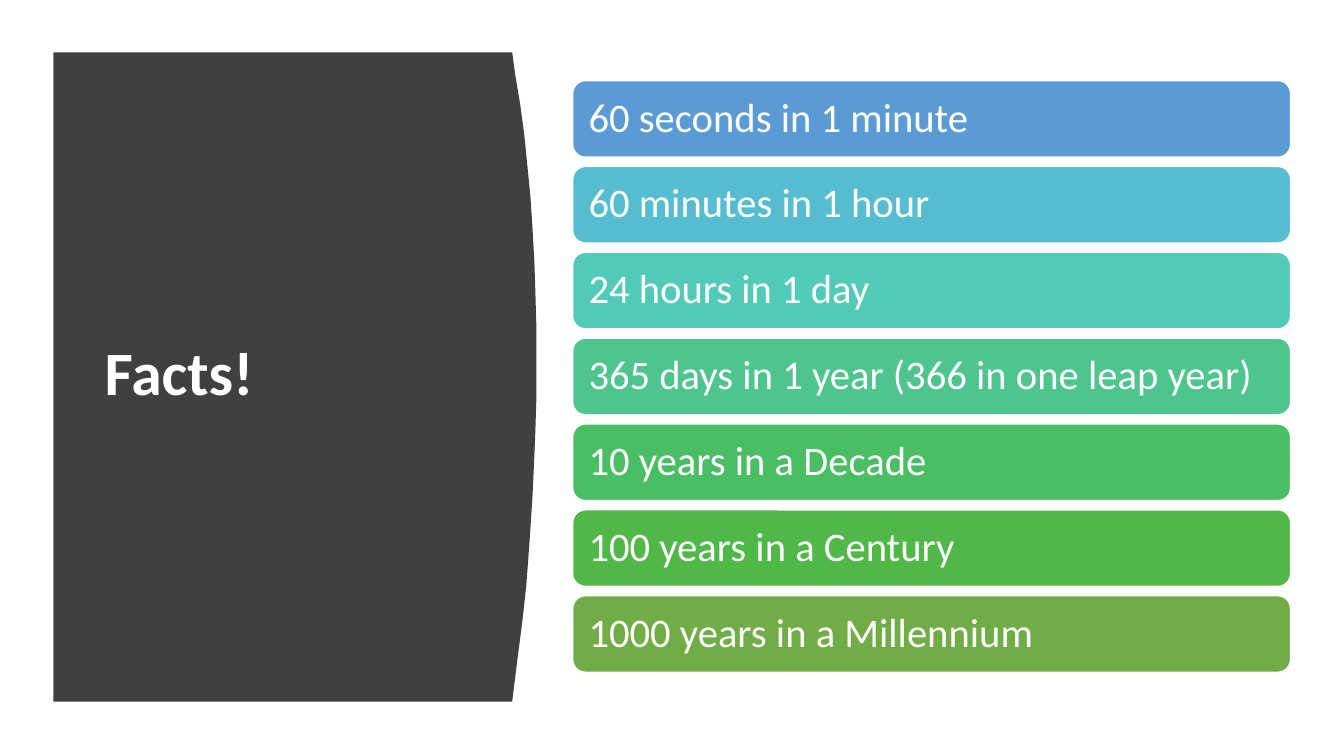
from pptx import Presentation
from pptx.dml.color import RGBColor
from pptx.enum.shapes import MSO_SHAPE
from pptx.enum.text import MSO_ANCHOR, PP_ALIGN
from pptx.util import Inches, Pt

ROUNDED = MSO_SHAPE.ROUNDED_RECTANGLE
MIDDLE = MSO_ANCHOR.MIDDLE
LEFT = PP_ALIGN.LEFT

WHITE = RGBColor(0xFF, 0xFF, 0xFF)
CHARCOAL = RGBColor(0x40, 0x40, 0x40)
FONT = "Calibri"

TITLE = "Facts!"
FACTS = [
    ("60 seconds in 1 minute", RGBColor(0x5B, 0x9B, 0xD5)),
    ("60 minutes in 1 hour", RGBColor(0x56, 0xBC, 0xD0)),
    ("24 hours in 1 day", RGBColor(0x52, 0xCA, 0xB8)),
    ("365 days in 1 year (366 in one leap year)", RGBColor(0x4D, 0xC5, 0x8D)),
    ("10 years in a Decade", RGBColor(0x49, 0xBF, 0x64)),
    ("100 years in a Century", RGBColor(0x50, 0xB8, 0x46)),
    ("1000 years in a Millennium", RGBColor(0x70, 0xAD, 0x47)),
]
PANEL = [
    (0.53, 0.52), (5.08, 0.52), (5.11, 0.74), (5.16, 1.04), (5.2, 1.34),
    (5.23, 1.64), (5.26, 1.94), (5.28, 2.24), (5.3, 2.6), (5.31, 2.9),
    (5.32, 3.25), (5.32, 3.94), (5.31, 4.27), (5.3, 4.52), (5.28, 4.95),
    (5.25, 5.4), (5.22, 5.81), (5.18, 6.17), (5.14, 6.48), (5.11, 6.72),
    (5.08, 6.96), (0.53, 6.96),
]
BAR_LEFT, BAR_WIDTH, BAR_HEIGHT = 5.68, 7.12, 0.76
FIRST_TOP, LAST_TOP = 0.8, 5.91


def write(tf, text, size, bold=False):
    tf.word_wrap = True
    tf.vertical_anchor = MIDDLE
    p = tf.paragraphs[0]
    p.text = text
    p.alignment = LEFT
    p.line_spacing = 0.9
    p.font.name = FONT
    p.font.size = Pt(size)
    p.font.bold = bold
    p.font.color.rgb = WHITE


prs = Presentation()
prs.slide_width, prs.slide_height = Inches(13.33), Inches(7.5)
s = prs.slides.add_slide(prs.slide_layouts[6])

points = [(Inches(x), Inches(y)) for x, y in PANEL]
builder = s.shapes.build_freeform(*points[0])
builder.add_line_segments(points[1:], close=True)
panel = builder.convert_to_shape()
panel.shadow.inherit = False
panel.fill.solid()
panel.fill.fore_color.rgb = CHARCOAL
panel.line.fill.background()

title = s.shapes.add_textbox(Inches(0.94), Inches(1.11), Inches(3.74), Inches(5.24))
write(title.text_frame, TITLE, 44, bold=True)

pitch = (LAST_TOP - FIRST_TOP) / (len(FACTS) - 1)
for i, (fact, color) in enumerate(FACTS):
    sp = s.shapes.add_shape(ROUNDED, Inches(BAR_LEFT), Inches(FIRST_TOP + i * pitch),
                            Inches(BAR_WIDTH), Inches(BAR_HEIGHT))
    sp.shadow.inherit = False
    sp.fill.solid()
    sp.fill.fore_color.rgb = color
    sp.line.color.rgb = WHITE
    sp.line.width = Pt(1)
    tf = sp.text_frame
    tf.margin_left = tf.margin_right = tf.margin_top = tf.margin_bottom = Inches(0.12)
    write(tf, fact, 29)

prs.save("out.pptx")
